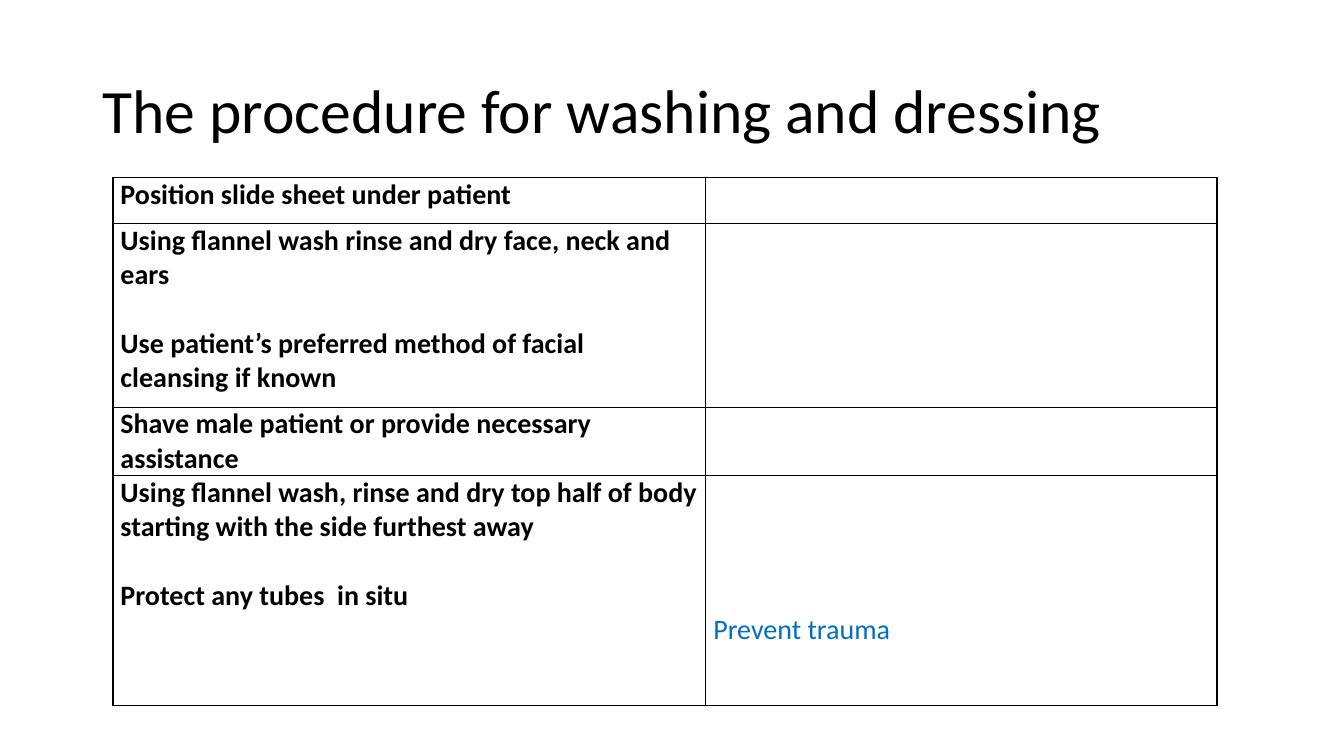
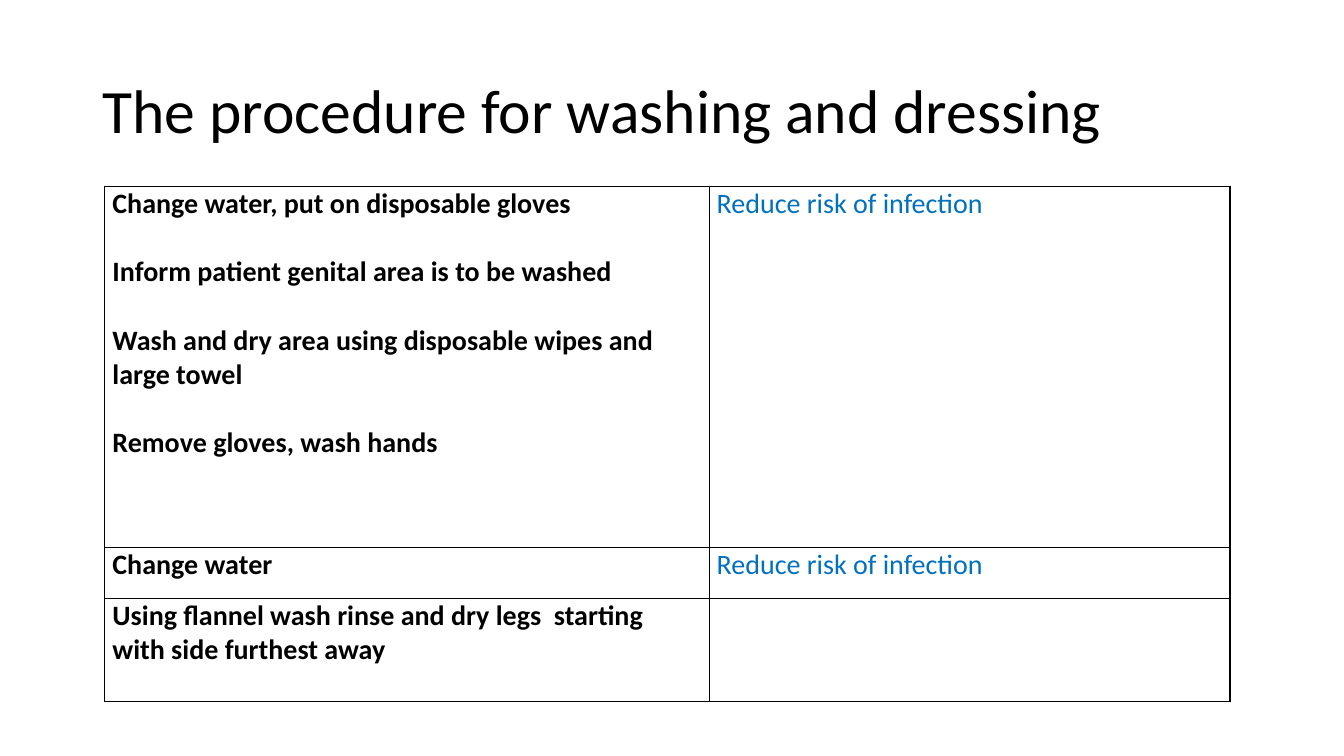
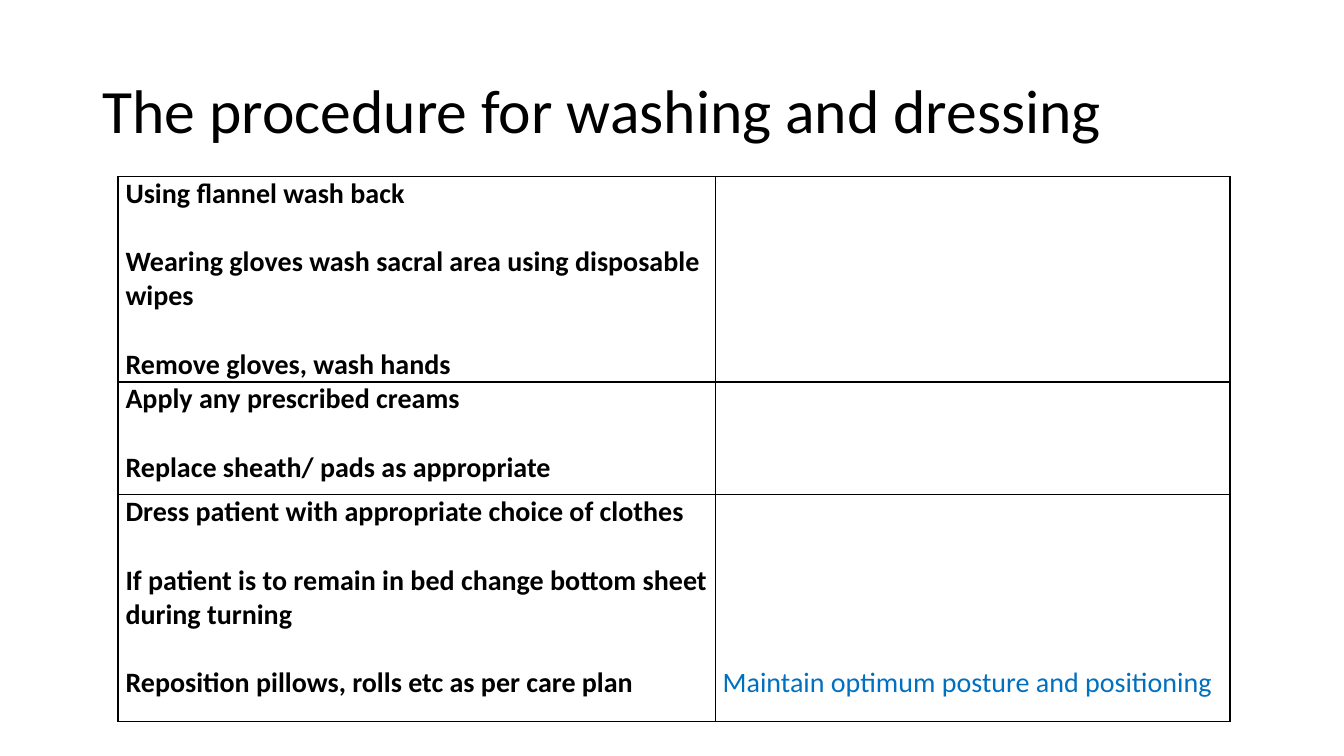
from dataclasses import dataclass

from lxml.etree import SubElement
from pptx import Presentation
from pptx.dml.color import RGBColor
from pptx.enum.text import MSO_ANCHOR
from pptx.oxml.ns import qn
from pptx.util import Inches, Pt

# The slide is a grid of 1333 columns by 750 rows; boxes count in grid units.
GRID_UNIT = Inches(0.01)
GRID_COLUMNS, GRID_ROWS = 1333, 750


@dataclass(frozen=True)
class Theme:
    font: str = "Calibri"
    ink: RGBColor = RGBColor(0x00, 0x00, 0x00)
    reason: RGBColor = RGBColor(0x00, 0x70, 0xC0)
    paper: RGBColor = RGBColor(0xFF, 0xFF, 0xFF)
    title_size: Pt = Pt(44)
    body_size: Pt = Pt(20)
    body_line: Pt = Pt(24.4)
    border_width: Pt = Pt(1)


@dataclass(frozen=True)
class Box:
    left: int
    top: int
    width: int


@dataclass(frozen=True)
class Step:
    """One table row; reason_line is the text line on which the reason stands."""
    height: int
    actions: tuple
    reason: str = ""
    reason_line: int = 0


THEME = Theme()
TITLE = "The procedure for washing and dressing"
TITLE_BOX, TITLE_HEIGHT = Box(92, 40, 1150), 145
ACTION_SHARE = 0.537
CELL_INSET = 7.5

PAGES = (
    (Box(112, 176, 1095), (
        Step(46, ("Position slide sheet under patient",)),
        Step(182, ("Using flannel wash rinse and dry face, neck and ears",
                   "Use patient’s preferred method of facial cleansing if known")),
        Step(68, ("Shave male patient or provide necessary assistance",)),
        Step(228, ("Using flannel wash, rinse and dry top half of body "
                   "starting with the side furthest away",
                   "Protect any tubes  in situ"),
             "Prevent trauma", 4),
    )),
    (Box(104, 185, 1116), (
        Step(358, ("Change water, put on disposable gloves",
                   "Inform patient genital area is to be washed",
                   "Wash and dry area using disposable wipes and large towel",
                   "Remove gloves, wash hands"),
             "Reduce risk of infection"),
        Step(51, ("Change water",), "Reduce risk of infection"),
        Step(102, ("Using flannel wash rinse and dry legs  starting "
                   "with side furthest away",)),
    )),
    (Box(117, 175, 1103), (
        Step(204, ("Using flannel wash back",
                   "Wearing gloves wash sacral area using disposable wipes",
                   "Remove gloves, wash hands")),
        Step(112, ("Apply any prescribed creams",
                   "Replace sheath/ pads as appropriate")),
        Step(225, ("Dress patient with appropriate choice of clothes",
                   "If patient is to remain in bed change bottom sheet during turning",
                   "Reposition pillows, rolls etc as per care plan"),
             "Maintain optimum posture and positioning", 5),
    )),
)


def grid(units):
    return round(units * GRID_UNIT)


def set_font(paragraph, size, color, bold=False):
    font = paragraph.font
    font.name, font.size, font.bold = THEME.font, size, bold
    font.color.rgb = color


def add_title(slide, box, height):
    shape = slide.shapes.add_textbox(
        grid(box.left), grid(box.top), grid(box.width), grid(height))
    frame = shape.text_frame
    frame.word_wrap = True
    frame.vertical_anchor = MSO_ANCHOR.MIDDLE
    paragraph = frame.paragraphs[0]
    paragraph.text = TITLE
    paragraph.line_spacing = 0.9
    set_font(paragraph, THEME.title_size, THEME.ink)


def add_borders(cell):
    properties = cell._tc.get_or_add_tcPr()
    for index, side in enumerate(("lnL", "lnR", "lnT", "lnB")):
        line = SubElement(properties, qn(f"a:{side}"), w=str(THEME.border_width))
        fill = SubElement(line, qn("a:solidFill"))
        SubElement(fill, qn("a:srgbClr"), val=str(THEME.ink))
        properties.insert(index, line)


def fill_cell(cell, texts, color, bold=False, first_line=0):
    """Write texts one blank line apart, the first on the given line."""
    cell.fill.solid()
    cell.fill.fore_color.rgb = THEME.paper
    add_borders(cell)
    cell.margin_left = cell.margin_right = grid(CELL_INSET)
    cell.margin_top = first_line * THEME.body_line
    cell.margin_bottom = 0
    frame = cell.text_frame
    for index, text in enumerate(texts):
        paragraph = frame.add_paragraph() if index else frame.paragraphs[0]
        paragraph.text = text
        if index:
            paragraph.space_before = THEME.body_line
        set_font(paragraph, THEME.body_size, color, bold)


def add_steps_table(slide, box, steps):
    height = sum(step.height for step in steps)
    table = slide.shapes.add_table(
        len(steps), 2, grid(box.left), grid(box.top), grid(box.width), grid(height)).table
    table.first_row = table.horz_banding = False
    for column, share in zip(table.columns, (ACTION_SHARE, 1 - ACTION_SHARE)):
        column.width = grid(box.width * share)
    for row, step in zip(table.rows, steps):
        row.height = grid(step.height)
        action_cell, reason_cell = row.cells
        fill_cell(action_cell, step.actions, THEME.ink, bold=True)
        fill_cell(reason_cell, (step.reason,), THEME.reason, first_line=step.reason_line)


def main():
    presentation = Presentation()
    presentation.slide_width = grid(GRID_COLUMNS)
    presentation.slide_height = grid(GRID_ROWS)
    blank_layout = presentation.slide_layouts[6]
    for table_box, steps in PAGES:
        slide = presentation.slides.add_slide(blank_layout)
        add_title(slide, TITLE_BOX, TITLE_HEIGHT)
        add_steps_table(slide, table_box, steps)
    presentation.save("out.pptx")


if __name__ == "__main__":
    main()
